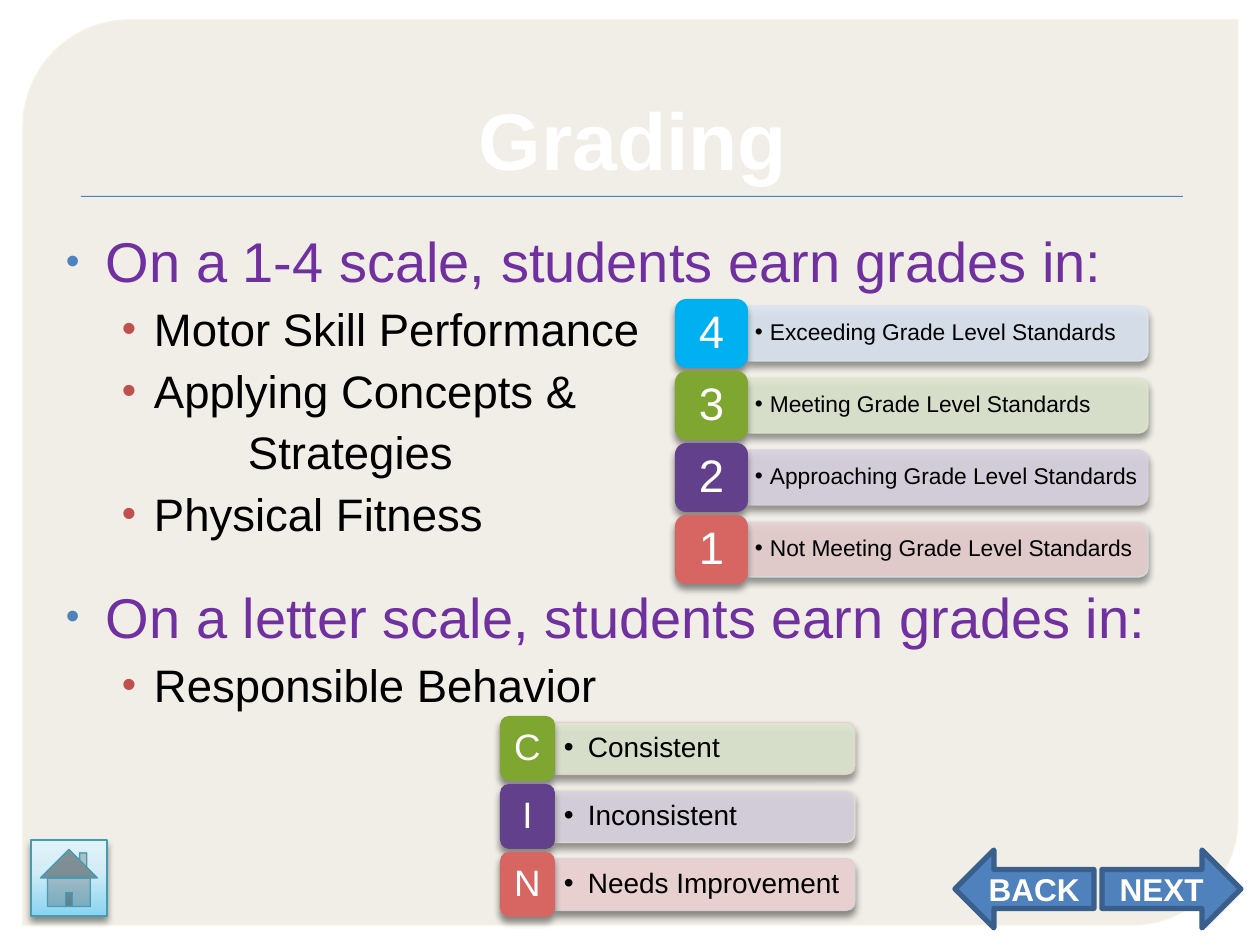
from copy import deepcopy

from lxml import etree
from pptx import Presentation
from pptx.dml.color import RGBColor
from pptx.enum.shapes import MSO_SHAPE
from pptx.enum.text import MSO_ANCHOR, PP_ALIGN
from pptx.oxml.ns import qn
from pptx.util import Emu, Pt

PX = 914400 // 126
FONT = "Arial"
CENTER, LEFT = PP_ALIGN.CENTER, PP_ALIGN.LEFT
TOP, MIDDLE = MSO_ANCHOR.TOP, MSO_ANCHOR.MIDDLE

WHITE = RGBColor(0xFF, 0xFF, 0xFF)
BLACK = RGBColor(0, 0, 0)
CARD = RGBColor(0xE8, 0xE6, 0xD9)
CARD_LINE = RGBColor(0xF6, 0xF3, 0xE4)
BLUE = RGBColor(0x4F, 0x81, 0xBD)
NAVY = RGBColor(0x3A, 0x5F, 0x8C)
BRICK = RGBColor(0xC0, 0x50, 0x4D)
PURPLE = RGBColor(0x70, 0x30, 0xA0)
SKY = RGBColor(0x00, 0xB0, 0xF0)
GREEN = RGBColor(0x7F, 0xA6, 0x31)
VIOLET = RGBColor(0x62, 0x40, 0x8B)
RED = RGBColor(0xD7, 0x65, 0x62)
PALE_BLUE = RGBColor(0xDC, 0xE6, 0xF2)
PALE_GREEN = RGBColor(0xDE, 0xE7, 0xD1)
PALE_VIOLET = RGBColor(0xD8, 0xD3, 0xE0)
PALE_RED = RGBColor(0xE8, 0xD0, 0xD0)
PALE_TEAL = RGBColor(0xD0, 0xE3, 0xEA)
TEAL = RGBColor(0x44, 0x9C, 0xB4)
HOME_STOPS = [(0, RGBColor(0x89, 0xD4, 0xF0)), (0.62, RGBColor(0xD5, 0xED, 0xF7)),
              (1, RGBColor(0xE1, 0xF2, 0xF9))]

# Content
HEADING = dict(size=32, color=PURPLE, margin=40, indent=-40, bullet=(BLUE, 70))
ITEM = dict(size=26, color=BLACK, margin=88, indent=-32, before=4, bullet=(BRICK, 90), level=1)
CONTINUED = dict(size=26, color=BLACK, margin=182, indent=0, before=4, level=1)
OUTLINE = [
    ("On a 1-4 scale, students earn grades in:", HEADING),
    ("Motor Skill Performance", ITEM),
    ("Applying Concepts &", ITEM),
    ("Strategies", CONTINUED),
    ("Physical Fitness", ITEM),
    ("On a letter scale, students earn grades in:", {**HEADING, "before": 24}),
    ("Responsible Behavior", ITEM),
]
# Each scale row: grade, meaning, tile colour, bar colour, bar outline, bar opacity
SCALES = [
    dict(left=675, top=299, tile=(73, 69), bar=(400, 55), pitch=72, tile_size=26,
         bar_size=13, indent=15, inset=7, rows=[
             ("4", "Exceeding Grade Level Standards", SKY, PALE_BLUE, PALE_BLUE, 90),
             ("3", "Meeting Grade Level Standards", GREEN, PALE_GREEN, PALE_GREEN, 90),
             ("2", "Approaching Grade Level Standards", VIOLET, PALE_VIOLET, PALE_VIOLET, 90),
             ("1", "Not Meeting Grade Level Standards", RED, PALE_RED, PALE_TEAL, 90)]),
    dict(left=500, top=716, tile=(55, 65), bar=(300, 52), pitch=68, tile_size=21,
         bar_size=16, indent=24, inset=9, rows=[
             ("C", "Consistent", GREEN, PALE_GREEN, PALE_RED, 90),
             ("I", "Inconsistent", VIOLET, PALE_VIOLET, PALE_GREEN, 90),
             ("N", "Needs Improvement", RED, PALE_RED, PALE_VIOLET, 100)]),
]
BUTTONS = [("NEXT", MSO_SHAPE.RIGHT_ARROW, 1102), ("BACK", MSO_SHAPE.LEFT_ARROW, 955)]


def px(*values):
    return [Emu(round(value * PX)) for value in values]


def child(parent, tag, **attributes):
    return etree.SubElement(parent, qn(tag), {k: str(v) for k, v in attributes.items()})


def add_form(shapes, kind, at, fill=None, line=None, width=0.75, alpha=None, shadow=None):
    """Shape with optional (fill, line) opacity and (opacity, blur, distance) shadow."""
    form = shapes.add_shape(kind, *px(*at))
    form.shadow.inherit = False
    if fill is not None:
        form.fill.solid()
        form.fill.fore_color.rgb = fill
    if line is None:
        form.line.fill.background()
    else:
        form.line.color.rgb = line
        form.line.width = Pt(width)
    properties = form._element.spPr
    if alpha:
        for color, percent in zip(properties.iter(qn("a:srgbClr")), alpha):
            child(color, "a:alpha", val=percent * 1000)
    if shadow:
        opacity, blur, distance = shadow
        outer = child(properties.find(qn("a:effectLst")), "a:outerShdw", blurRad=Pt(blur),
                      dist=Pt(distance), dir=5400000, rotWithShape=0)
        color = child(outer, "a:srgbClr", val="000000")
        child(color, "a:alpha", val=opacity * 1000)
    return form


def write(para, text, size, color, bold=False, align=LEFT, margin=0, indent=0,
          before=0, spacing=None, bullet=None, level=0):
    para.level = level
    para.alignment = align
    para.space_before = Pt(before)
    if spacing:
        para.line_spacing = spacing
    properties = para._p.get_or_add_pPr()
    properties.set("marL", str(px(margin)[0]))
    properties.set("indent", str(px(indent)[0]))
    if bullet:
        bullet_color, percent = bullet
        child(child(properties, "a:buClr"), "a:srgbClr", val=bullet_color)
        child(properties, "a:buSzPct", val=percent * 1000)
        child(properties, "a:buFont", typeface=FONT)
        child(properties, "a:buChar", char="•")
    span = para.add_run()
    span.text = text
    span.font.name, span.font.size, span.font.bold = FONT, Pt(size), bold
    span.font.color.rgb = color


def set_frame(box, anchor=MIDDLE, inset=0, wrap=True):
    frame = box.text_frame
    frame.word_wrap = wrap
    frame.vertical_anchor = anchor
    frame.margin_left = frame.margin_right = px(inset)[0]
    frame.margin_top = frame.margin_bottom = 0
    return frame


def add_scale(page, scale):
    shapes = page.shapes.add_group_shape().shapes
    tile_width, tile_height = scale["tile"]
    width, height = scale["bar"]
    left = scale["left"] + tile_width
    soft = (43, 4, 3)
    for index, row in enumerate(scale["rows"]):
        grade, meaning, tile_color, bar_color, outline, opacity = row
        top = scale["top"] + index * scale["pitch"]
        middle = top + tile_height / 2
        # Bar: an upright tab turned on its side
        bar = add_form(shapes, MSO_SHAPE.ROUND_2_SAME_RECTANGLE,
                       (left + (width - height) / 2, middle - width / 2, height, width),
                       bar_color, outline, alpha=(opacity, 90), shadow=soft)
        bar.rotation = 90
        label = shapes.add_textbox(*px(left, middle - height / 2, width, height))
        write(set_frame(label, inset=scale["inset"]).paragraphs[0], meaning, scale["bar_size"],
              BLACK, margin=scale["indent"], indent=-scale["indent"], spacing=0.9,
              bullet=(BLACK, 100))
        # Grade tile
        tile = add_form(shapes, MSO_SHAPE.ROUNDED_RECTANGLE,
                        (scale["left"], top, tile_width, tile_height), tile_color, shadow=soft)
        write(set_frame(tile).paragraphs[0], grade, scale["tile_size"], WHITE,
              align=CENTER, spacing=0.9)


def main():
    deck = Presentation()
    deck.slide_width, deck.slide_height = px(1260, 945)
    page = deck.slides.add_slide(deck.slide_layouts[6])

    # Card, title and rule
    card = add_form(page.shapes, MSO_SHAPE.ROUND_2_DIAG_RECTANGLE, (23, 20, 1215, 905),
                    CARD, CARD_LINE, 0.87, alpha=(65, 88))
    card.adjustments[0], card.adjustments[1] = 0.118, 0
    add_form(page.shapes, MSO_SHAPE.RECTANGLE, (81, 196, 1102, 1), BLUE, shadow=(75, 1, 1))
    title = page.shapes.add_textbox(*px(81, 85, 1104, 106))
    write(set_frame(title).paragraphs[0], "Grading", 46, WHITE, bold=True, align=CENTER)

    # Outline
    body = page.shapes.add_textbox(*px(66, 227, 1130, 490))
    frame = set_frame(body, anchor=TOP)
    for index, (text, style) in enumerate(OUTLINE):
        para = frame.add_paragraph() if index else frame.paragraphs[0]
        write(para, text, **style)

    for scale in SCALES:
        add_scale(page, scale)

    # Navigation
    for text, kind, left in BUTTONS:
        arrow = add_form(page.shapes, kind, (left, 850, 139, 78), BLUE, NAVY, 3)
        write(set_frame(arrow, wrap=False).paragraphs[0], text, 18, WHITE,
              bold=True, align=CENTER)
    home = add_form(page.shapes, MSO_SHAPE.ACTION_BUTTON_HOME, (31, 840, 76, 76),
                    line=TEAL, shadow=(43, 4, 3))
    home.fill.gradient()
    home.fill.gradient_angle = 90
    stops = home._element.spPr.find(qn("a:gradFill")).find(qn("a:gsLst"))
    stops.append(deepcopy(stops[0]))
    for stop, (position, color) in zip(home.fill.gradient_stops, HOME_STOPS):
        stop.position = position
        stop.color.rgb = color

    deck.save("out.pptx")


if __name__ == "__main__":
    main()
